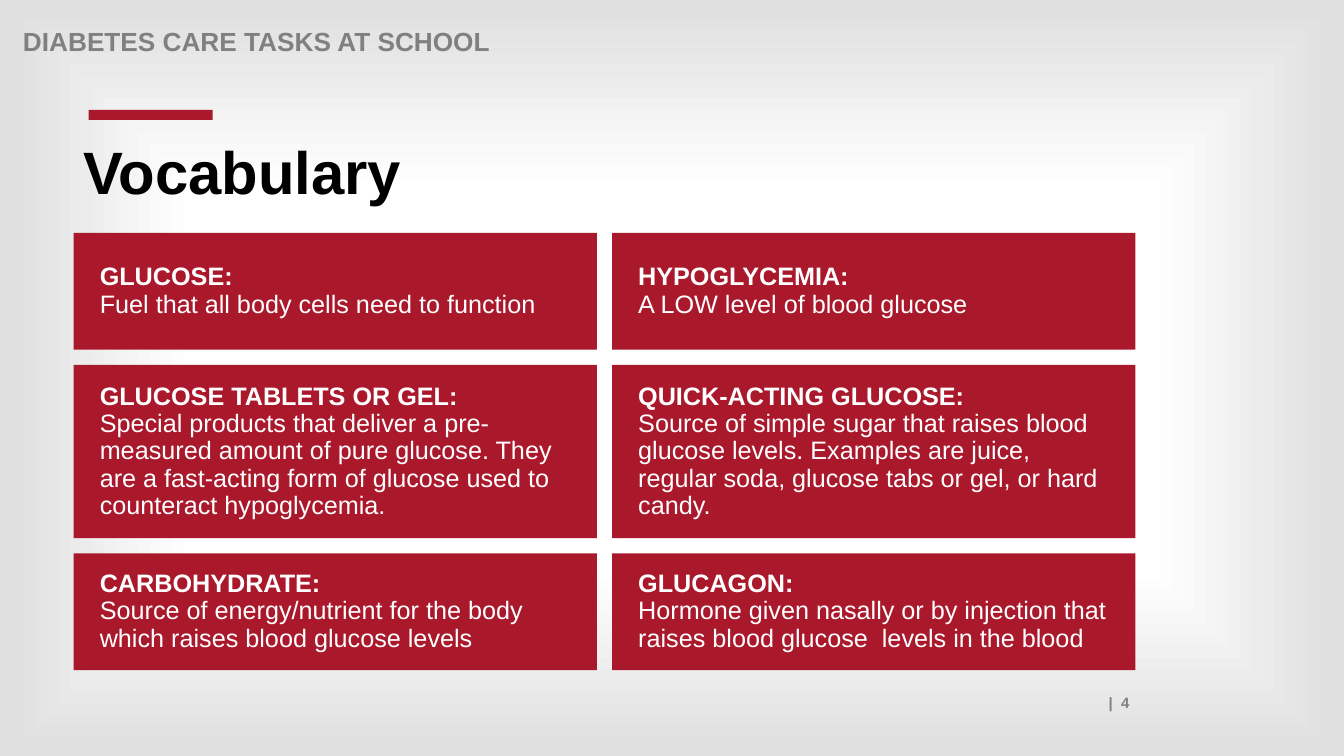
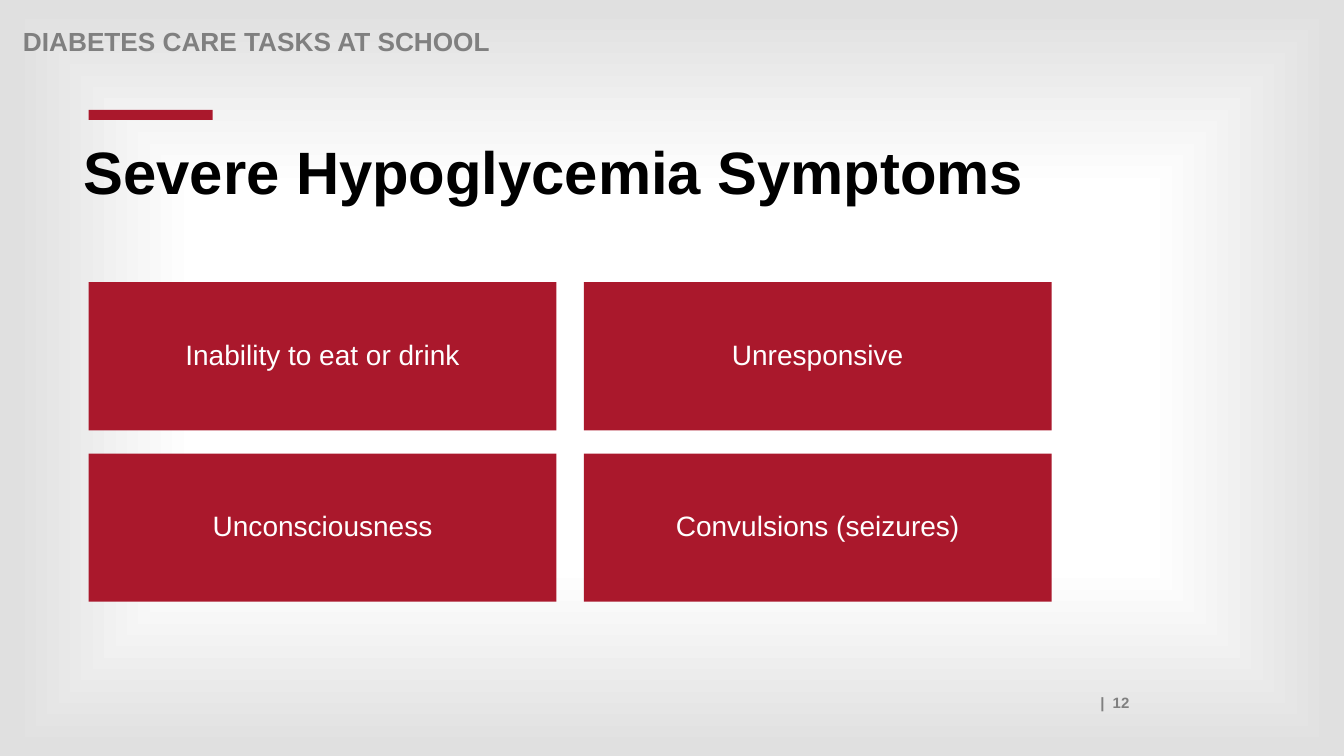
from pptx import Presentation
from pptx.dml.color import RGBColor
from pptx.enum.shapes import MSO_SHAPE
from pptx.enum.text import MSO_ANCHOR, PP_ALIGN
from pptx.oxml import parse_xml
from pptx.oxml.ns import nsdecls, qn
from pptx.util import Inches, Pt

RECTANGLE = MSO_SHAPE.RECTANGLE
TOP, MIDDLE = MSO_ANCHOR.TOP, MSO_ANCHOR.MIDDLE
LEFT, CENTER, RIGHT = PP_ALIGN.LEFT, PP_ALIGN.CENTER, PP_ALIGN.RIGHT

FONT = "Arial"
RED, GRAY, BLACK, WHITE = "AA182C", "808080", "000000", "FFFFFF"
BACKGROUND_STOPS = [(12, WHITE), (50, WHITE), (98, "E0E0E0")]
HEADER = "DIABETES CARE TASKS AT SCHOOL"

VOCABULARY = [
    [("GLUCOSE:", "Fuel that all body cells need to function"),
     ("HYPOGLYCEMIA:", "A LOW level of blood glucose")],
    [("GLUCOSE TABLETS OR GEL:",
      "Special products that deliver a pre-measured amount of pure glucose. "
      "They are a fast-acting form of glucose used to counteract hypoglycemia."),
     ("QUICK-ACTING GLUCOSE:",
      "Source of simple sugar that raises blood glucose levels. Examples are "
      "juice, regular soda, glucose tabs or gel, or hard candy.")],
    [("CARBOHYDRATE:",
      "Source of energy/nutrient for the body which raises blood glucose levels"),
     ("GLUCAGON:",
      "Hormone given nasally or by injection that raises blood glucose  levels "
      "in the blood")],
]
SYMPTOMS = [["Inability to eat or drink", "Unresponsive"],
            ["Unconsciousness", "Convulsions (seizures)"]]


def add_rectangle(slide, left, top, width, height):
    shape = slide.shapes.add_shape(
        RECTANGLE, Inches(left), Inches(top), Inches(width), Inches(height))
    shape.shadow.inherit = False
    shape.fill.solid()
    shape.fill.fore_color.rgb = RGBColor.from_string(RED)
    shape.line.fill.background()
    return shape


def write_text(shape, parts, size, color, align=LEFT, anchor=TOP, spacing=0.9):
    """Fill the shape with one paragraph of (text, bold) parts, one per line."""
    frame = shape.text_frame
    frame.word_wrap = True
    frame.vertical_anchor = anchor
    paragraph = frame.paragraphs[0]
    paragraph.alignment = align
    paragraph.line_spacing = spacing
    paragraph.font.name = FONT
    paragraph.font.size = Pt(size)
    paragraph.font.color.rgb = RGBColor.from_string(color)
    for index, (text, bold) in enumerate(parts):
        if index:
            paragraph.add_line_break()
        run = paragraph.add_run()
        run.text = text
        run.font.bold = bold


presentation = Presentation()
presentation.slide_width = Inches(13.33)
presentation.slide_height = Inches(7.5)

# Shared background: white center fading to gray edges
master = presentation.slide_master
master.background.fill.gradient()
gradient = master.element.find(".//" + qn("a:gradFill"))
stops = "".join(
    f'<a:gs pos="{position * 1000}"><a:srgbClr val="{color}"/></a:gs>'
    for position, color in BACKGROUND_STOPS)
gradient.getparent().replace(gradient, parse_xml(
    f'<a:gradFill {nsdecls("a")} rotWithShape="1"><a:gsLst>{stops}</a:gsLst>'
    '<a:path path="shape"><a:fillToRect l="50000" t="50000" r="50000" b="50000"/>'
    '</a:path></a:gradFill>'))

# Shared header, accent bar, title and page number
slides = []
for title, number in [("Vocabulary", 4), ("Severe Hypoglycemia Symptoms", 12)]:
    slide = presentation.slides.add_slide(presentation.slide_layouts[6])
    add_rectangle(slide, 0.88, 1.09, 1.23, 0.1)
    for text, box, size, color, align, spacing in [
        (HEADER, (0.13, 0.24, 11, 0.28), 18.7, GRAY, LEFT, 0.9),
        (title, (0.73, 1.37, 11.73, 0.95), 42.7, BLACK, LEFT, 0.9),
        (f"|  {number}", (1.21, 6.83, 10.09, 0.28), 10.7, GRAY, RIGHT, 1.0),
    ]:
        text_box = slide.shapes.add_textbox(*map(Inches, box))
        write_text(text_box, [(text, True)], size, color, align, spacing=spacing)
    slides.append(slide)
vocabulary_slide, symptoms_slide = slides

# Vocabulary cards
card_width, card_gap = 5.19, 0.15
top = 2.31
for row, height in zip(VOCABULARY, [1.16, 1.72, 1.16]):
    for column, (term, meaning) in enumerate(row):
        left = 0.73 + column * (card_width + card_gap)
        card = add_rectangle(vocabulary_slide, left, top, card_width, height)
        card.text_frame.margin_left = Inches(0.26)
        card.text_frame.margin_right = Inches(0.24)
        write_text(card, [(term, True), (meaning, False)], 18, WHITE, anchor=MIDDLE)
    top += height + card_gap

# Symptom cards
for row_index, row in enumerate(SYMPTOMS):
    for column, symptom in enumerate(row):
        card = add_rectangle(
            symptoms_slide, 0.88 + column * 4.91, 2.8 + row_index * 1.7, 4.64, 1.47)
        write_text(card, [(symptom, False)], 20, WHITE, CENTER, MIDDLE)

presentation.save("out.pptx")
